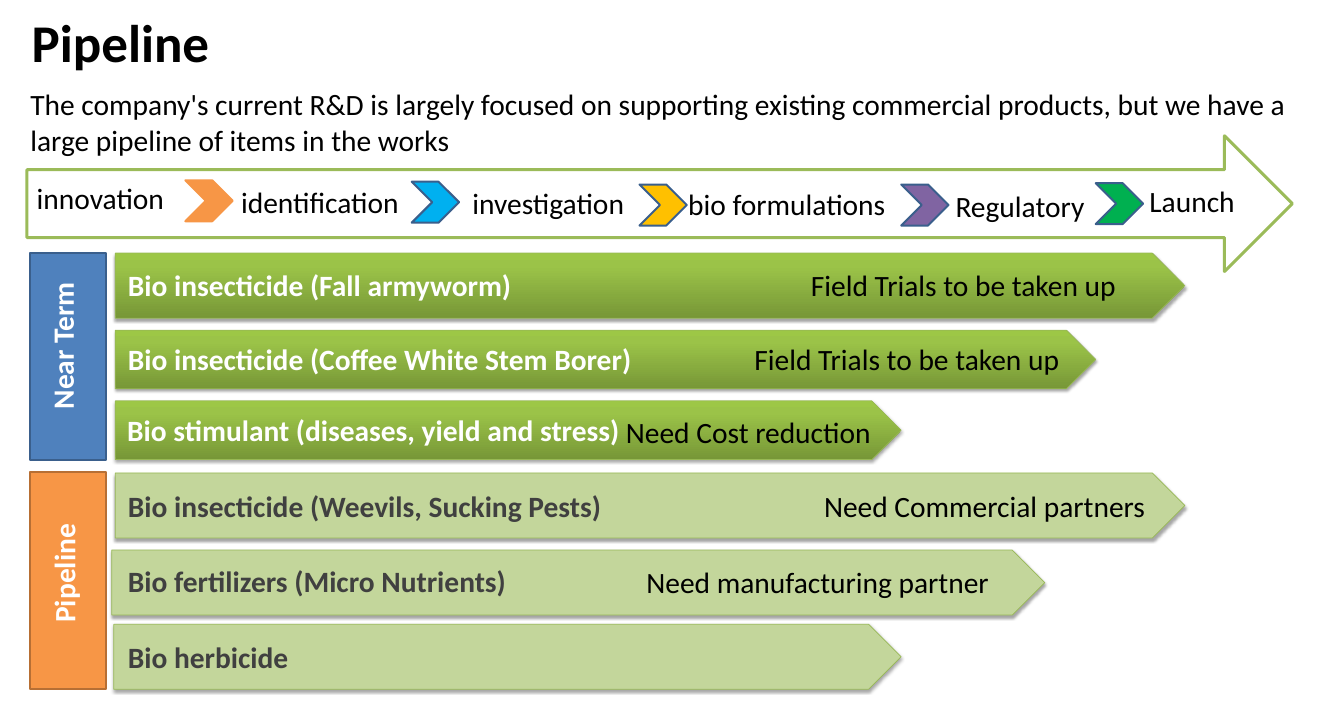
from lxml.etree import SubElement
from copy import deepcopy
from pptx import Presentation
from pptx.dml.color import RGBColor
from pptx.enum.shapes import MSO_SHAPE as Shape
from pptx.enum.text import MSO_AUTO_SIZE as AutoSize, PP_ALIGN as Align
from pptx.oxml.ns import qn
from pptx.util import Inches, Pt

BLACK = RGBColor(0x00, 0x00, 0x00)
WHITE = RGBColor(0xFF, 0xFF, 0xFF)
CHARCOAL = RGBColor(0x40, 0x40, 0x40)
BLUE = RGBColor(0x4F, 0x81, 0xBD)
DARK_BLUE = RGBColor(0x3A, 0x5F, 0x8C)
SKY = RGBColor(0x00, 0xB0, 0xF0)
ORANGE = RGBColor(0xF7, 0x96, 0x46)
DARK_ORANGE = RGBColor(0xB7, 0x6F, 0x34)
AMBER = RGBColor(0xFF, 0xC0, 0x00)
PURPLE = RGBColor(0x80, 0x64, 0xA2)
GREEN = RGBColor(0x00, 0xB0, 0x50)
OLIVE = RGBColor(0x9B, 0xBB, 0x59)
BAR_LINE = RGBColor(0x98, 0xB9, 0x55)
PALE_GREEN = RGBColor(0xC3, 0xD6, 0x9B)
BAR_GRADIENT = [(0, RGBColor(0x77, 0x97, 0x37)),
                (0.8, RGBColor(0x9B, 0xC3, 0x48)),
                (1, RGBColor(0x9D, 0xC7, 0x46))]

TEXT_HEIGHT = 0.61

# label, left, top, width
STAGES = [("innovation", 0.42, 2.5, 2.29),
          ("identification", 3.31, 2.56, 2.74),
          ("investigation", 6.58, 2.57, 2.74),
          ("bio formulations", 9.63, 2.58, 3.19),
          ("Regulatory", 13.41, 2.61, 2.74),
          ("Launch", 16.15, 2.54, 2.74)]

# left, top, fill, line
CHEVRONS = [(2.62, 2.55, ORANGE, ORANGE),
            (5.82, 2.57, SKY, DARK_BLUE),
            (9.04, 2.61, AMBER, DARK_BLUE),
            (12.74, 2.61, PURPLE, DARK_BLUE),
            (15.49, 2.59, GREEN, DARK_BLUE)]

# label, block top, block height, fill, line, label left, label top
TERMS = [("Near Term", 3.58, 2.92, BLUE, DARK_BLUE, 0.58, 3.83),
         ("Pipeline", 6.67, 3.08, ORANGE, DARK_ORANGE, 0.6, 7.05)]

# product, bar left, top, width, height, product left, top, width
NEAR_TERM = [
    ("Bio insecticide (Fall armyworm)", 1.63, 3.58, 15.12, 0.92, 1.71, 3.73, 6.39),
    ("Bio insecticide (Coffee White Stem Borer)", 1.63, 4.67, 13.86, 0.83, 1.71, 4.78, 7.6),
    ("Bio stimulant (diseases, yield and stress)", 1.63, 5.67, 11.11, 0.83, 1.7, 5.78, 7.62)]
LONG_TERM = [
    ("Bio insecticide (Weevils, Sucking Pests)", 1.63, 6.69, 15.12, 0.92, 1.71, 6.85, 7.66),
    ("Bio fertilizers (Micro Nutrients)", 1.58, 7.78, 13.19, 0.92, 1.71, 7.91, 7.66),
    ("Bio herbicide", 1.61, 8.83, 11.13, 0.92, 1.71, 8.99, 7.66)]

# note, left, top, alignment
NOTES = [("Field Trials to be taken up", 10.83, 3.73, Align.CENTER),
         ("Field Trials to be taken up", 10.03, 4.78, Align.CENTER),
         ("Need Cost reduction", 8.75, 5.81, Align.LEFT),
         ("Need Commercial partners", 10.71, 6.86, Align.RIGHT),
         ("Need manufacturing partner", 9.04, 7.93, Align.LEFT)]


def add_text(shapes, text, left, top, width, height=TEXT_HEIGHT, size=30,
             color=BLACK, bold=False, align=Align.LEFT, wrap=True):
    box = shapes.add_textbox(Inches(left), Inches(top), Inches(width), Inches(height))
    frame = box.text_frame
    frame.word_wrap = wrap
    frame.auto_size = AutoSize.SHAPE_TO_FIT_TEXT
    paragraph = frame.paragraphs[0]
    paragraph.text = text
    paragraph.alignment = align
    font = paragraph.font
    font.name, font.size, font.bold = "Calibri", Pt(size), bold
    font.color.rgb = color
    return box


def add_block(shapes, kind, left, top, width, height, fill, line, line_width=2):
    shape = shapes.add_shape(kind, Inches(left), Inches(top), Inches(width), Inches(height))
    shape.shadow.inherit = False
    shape.fill.solid()
    shape.fill.fore_color.rgb = fill
    shape.line.color.rgb = line
    shape.line.width = Pt(line_width)
    return shape


def add_drop_shadow(shape):
    effects = shape._element.spPr.find(qn("a:effectLst"))
    shadow = SubElement(effects, qn("a:outerShdw"), blurRad=str(Pt(3.1)), dist=str(Pt(1.8)),
                        dir="5400000", rotWithShape="0")
    color = SubElement(shadow, qn("a:srgbClr"), val=str(BLACK))
    SubElement(color, qn("a:alpha"), val="35000")


def apply_gradient(shape):
    """Fill the bar from dark at the bottom to light at the top."""
    shape.fill.gradient()
    shape.fill.gradient_angle = 90
    stop_list = shape._element.spPr.find(".//" + qn("a:gsLst"))
    stop_list.append(deepcopy(stop_list[-1]))
    for stop, (position, color) in zip(shape.fill.gradient_stops, BAR_GRADIENT):
        stop.position = position
        stop.color.rgb = color


def add_journey(slide):
    shapes = slide.shapes.add_group_shape().shapes
    add_block(shapes, Shape.RIGHT_ARROW, 0.38, 1.92, 17.89, 1.92, WHITE, OLIVE, 3)
    for stage in STAGES:
        add_text(shapes, *stage)
    for left, top, fill, line in CHEVRONS:
        add_block(shapes, Shape.CHEVRON, left, top, 0.67, 0.58, fill, line)


def add_term(shapes, label, top, height, fill, line, label_left, label_top):
    add_block(shapes, Shape.RECTANGLE, 0.42, top, 1.08, height, fill, line)
    box = add_text(shapes, label, label_left, label_top, 0.71, 2.12,
                   color=WHITE, bold=True, align=Align.CENTER)
    box.text_frame._txBody.bodyPr.set("vert", "vert270")


def add_products(shapes, products, text_color, gradient=False):
    for product, left, top, width, height, *text_place in products:
        bar = add_block(shapes, Shape.PENTAGON, left, top, width, height,
                        PALE_GREEN, BAR_LINE, 0.75)
        add_drop_shadow(bar)
        if gradient:
            apply_gradient(bar)
        add_text(shapes, product, *text_place, color=text_color, bold=True)


def main():
    presentation = Presentation()
    presentation.slide_width, presentation.slide_height = Inches(19), Inches(10)
    slide = presentation.slides.add_slide(presentation.slide_layouts[6])
    shapes = slide.shapes

    add_text(shapes, "Pipeline", 0.35, 0.08, 2.74, 1.01, size=54, bold=True, wrap=False)
    add_text(shapes, "The company's current R&D is largely focused on supporting existing "
             "commercial products, but we have a large pipeline of items in the works",
             0.33, 1.17, 18.55, 1.11)
    add_journey(slide)
    for term in TERMS:
        add_term(shapes, *term)
    add_products(shapes, NEAR_TERM, WHITE, gradient=True)
    add_products(shapes, LONG_TERM, CHARCOAL)
    for note, left, top, align in NOTES:
        add_text(shapes, note, left, top, 5.58, align=align)

    presentation.save("out.pptx")


if __name__ == "__main__":
    main()
